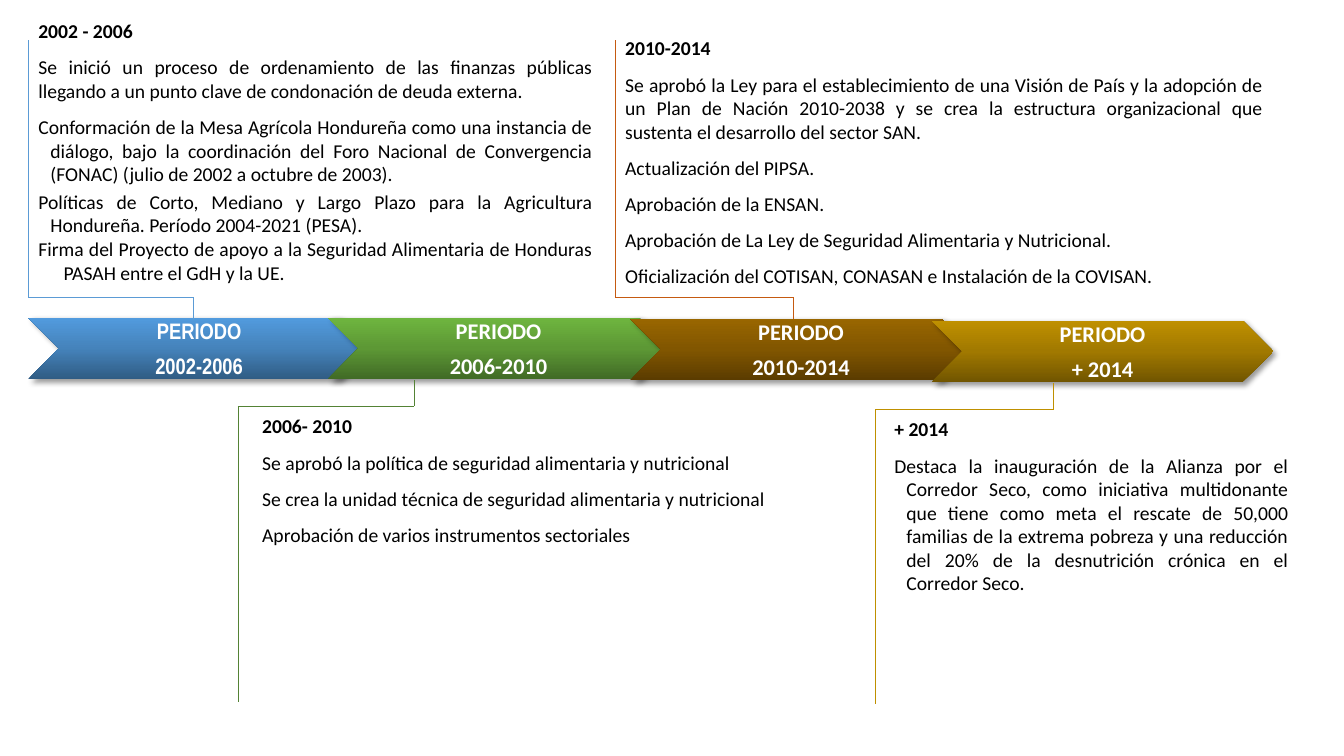
import pptx
import pptx.util
import pptx.dml.color
import pptx.enum.shapes
import pptx.enum.text
import pptx.oxml
import pptx.oxml.ns
import copy

Inches = pptx.util.Inches
Pt = pptx.util.Pt
RGBColor = pptx.dml.color.RGBColor
ALIGN = pptx.enum.text.PP_ALIGN
ANCHOR = pptx.enum.text.MSO_ANCHOR

BLACK = RGBColor(0x00, 0x00, 0x00)
WHITE = RGBColor(0xFF, 0xFF, 0xFF)
BLUE = RGBColor(0x5B, 0x9B, 0xD5)
ORANGE = RGBColor(0xC5, 0x5A, 0x11)
GREEN = RGBColor(0x54, 0x82, 0x35)
GOLD = RGBColor(0xBF, 0x90, 0x00)
# Chevron gradients, from bottom to top
BLUES = RGBColor(0x30, 0x5C, 0x84), RGBColor(0x45, 0x83, 0xBB), RGBColor(0x52, 0x9B, 0xDE)
GREENS = RGBColor(0x41, 0x6B, 0x26), RGBColor(0x5D, 0x98, 0x35), RGBColor(0x6E, 0xB5, 0x3F)
BROWNS = RGBColor(0x5B, 0x3C, 0x00), RGBColor(0x81, 0x56, 0x00), RGBColor(0x99, 0x66, 0x00)
GOLDS = RGBColor(0x71, 0x55, 0x00), RGBColor(0xA1, 0x79, 0x00), RGBColor(0xBF, 0x90, 0x00)

# Each panel: box, heading, then (text, hanging indent, space before, space after)
PANELS = [
    ((0.28, 0.14, 5.7, 2.81), "2002 - 2006", [
        ("Se inició un proceso de ordenamiento de las finanzas públicas llegando a un "
         "punto clave de condonación de deuda externa.", 0, 6, 3),
        ("Conformación de la Mesa Agrícola Hondureña como una instancia de diálogo, bajo "
         "la coordinación del Foro Nacional de Convergencia (FONAC) (julio de 2002 a "
         "octubre de 2003).", 0.12, 6, 3),
        ("Políticas de Corto, Mediano y Largo Plazo para la Agricultura Hondureña. "
         "Período 2004-2021 (PESA).", 0.12, 0, 0),
        ("Firma del Proyecto de apoyo a la Seguridad Alimentaria de Honduras PASAH entre "
         "el GdH y la UE.", 0.25, 0, 8)]),
    ((6.1, 0.31, 6.53, 2.64), "2010-2014", [
        ("Se aprobó la Ley para el establecimiento de una Visión de País y la adopción de "
         "un Plan de Nación 2010-2038 y se crea la estructura organizacional que sustenta "
         "el desarrollo del sector SAN.", 0, 6, 3),
        ("Actualización del PIPSA.", 0.12, 6, 3),
        ("Aprobación de la ENSAN.", 0.12, 6, 3),
        ("Aprobación de La Ley de Seguridad Alimentaria y Nutricional.", 0.12, 6, 3),
        ("Oficialización del COTISAN, CONASAN e Instalación de la COVISAN.", 0.12, 6, 3)]),
    ((2.5, 4.06, 5.59, 1.52), "2006- 2010", [
        ("Se aprobó la política de seguridad alimentaria y nutricional", 0, 6, 3),
        ("Se crea la unidad técnica de seguridad alimentaria y nutricional", 0, 6, 3),
        ("Aprobación de varios instrumentos sectoriales", 0.12, 6, 0)]),
    ((8.77, 4.09, 4.11, 3.15), "+ 2014", [
        ("Destaca la inauguración de la Alianza por el Corredor Seco, como iniciativa "
         "multidonante que tiene como meta el rescate de 50,000 familias de la extrema "
         "pobreza y una reducción del 20% de la desnutrición crónica en el Corredor Seco.",
         0.12, 6, 0)]),
]

# Each chevron: left, top, period, font, gradient
CHEVRONS = [
    (0.28, 3.15, "2002-2006", "Arial Narrow", BLUES),
    (3.25, 3.15, "2006-2010", "Calibri", GREENS),
    (6.25, 3.16, "2010-2014", "Calibri", BROWNS),
    (9.24, 3.18, "+ 2014", "Calibri", GOLDS),
]

# Each bracket: panel side x, far end y, bend y, chevron x, chevron y, colour
BRACKETS = [
    (0.28, 0.4, 2.95, 1.92, 3.17, BLUE),
    (6.1, 0.4, 2.95, 7.87, 3.16, ORANGE),
    (2.36, 6.96, 4.03, 4.11, 3.77, GREEN),
    (8.68, 6.98, 4.06, 10.45, 3.8, GOLD),
]

SHADOW = (
    '<a:outerShdw %s blurRad="50800" dist="38100" dir="2700000" algn="tl" rotWithShape="0">'
    '<a:srgbClr val="000000"><a:alpha val="40000"/></a:srgbClr></a:outerShdw>'
    % pptx.oxml.ns.nsdecls("a"))


def format_run(r, size, font, color, bold):
    r.font.size = Pt(size)
    r.font.name = font
    r.font.color.rgb = color
    r.font.bold = bold


def add_panel(sp, box, heading, items):
    """Text panel: bold heading followed by justified entries."""
    sp.left, sp.top, sp.width, sp.height = map(Inches, box)
    sp.fill.solid()
    sp.fill.fore_color.rgb = WHITE
    tf = sp.text_frame
    tf.word_wrap = True
    tf.auto_size = pptx.enum.text.MSO_AUTO_SIZE.NONE
    tf.vertical_anchor = ANCHOR.TOP
    rows = [(heading, 0, 6, 3)] + items
    tf.text = "\n".join(row[0] for row in rows)
    for i, (p, (text, indent, before, after)) in enumerate(zip(tf.paragraphs, rows)):
        p.alignment = ALIGN.JUSTIFY
        p.space_before, p.space_after = Pt(before), Pt(after)
        pPr = p._p.get_or_add_pPr()
        pPr.set("marL", str(Inches(indent)))
        pPr.set("indent", str(-Inches(indent)))
        pPr.append(pptx.oxml.parse_xml("<a:buNone %s/>" % pptx.oxml.ns.nsdecls("a")))
        format_run(p.runs[0], 14, "Calibri", BLACK, i == 0)


def add_chevron(s, box, period, font, gradient):
    """Timeline step with a three-colour vertical gradient."""
    sp = s.shapes.add_shape(pptx.enum.shapes.MSO_SHAPE.CHEVRON, *map(Inches, box))
    sp.fill.gradient()
    sp.fill.gradient_angle = 90
    gs_list = sp._element.spPr.find(".//" + pptx.oxml.ns.qn("a:gsLst"))
    gs_list.insert(1, copy.deepcopy(gs_list[0]))
    for stop, position, color in zip(sp.fill.gradient_stops, (0, 0.5, 1), gradient):
        stop.position = position
        stop.color.rgb = color
    sp.line.fill.background()
    sp.shadow.inherit = False
    effects = sp._element.spPr.find(pptx.oxml.ns.qn("a:effectLst"))
    effects.append(pptx.oxml.parse_xml(SHADOW))
    tf = sp.text_frame
    tf.word_wrap = True
    tf.vertical_anchor = ANCHOR.MIDDLE
    tf.text = "PERIODO\n" + period
    for p in tf.paragraphs:
        p.alignment = ALIGN.CENTER
        p.space_before = Pt(6)
        format_run(p.runs[0], 16, font, WHITE, True)


def add_bracket(s, x, far_y, bend_y, step_x, step_y, color):
    """Three thin lines joining a panel to its chevron."""
    points = [(x, far_y), (x, bend_y), (step_x, bend_y), (step_x, step_y)]
    for start, end in zip(points, points[1:]):
        line = s.shapes.add_connector(
            pptx.enum.shapes.MSO_CONNECTOR.STRAIGHT, *map(Inches, start + end))
        line.line.color.rgb = color
        line.line.width = Pt(0.5)
        line._element.spPr.append(
            pptx.oxml.parse_xml("<a:effectLst %s/>" % pptx.oxml.ns.nsdecls("a")))


def build_timeline(prs):
    # Comparison layout: a title and four body placeholders
    s = prs.slides.add_slide(prs.slide_layouts[4])
    title = s.shapes.title._element
    title.getparent().remove(title)
    for sp, panel in zip(list(s.placeholders), PANELS):
        add_panel(sp, *panel)
    # Timeline band
    for left, top, period, font, gradient in CHEVRONS:
        add_chevron(s, (left, top, 3.39, 0.61), period, font, gradient)
    # Brackets
    for bracket in BRACKETS:
        add_bracket(s, *bracket)


def main():
    prs = pptx.Presentation()
    prs.slide_width, prs.slide_height = Inches(13.33), Inches(7.5)
    build_timeline(prs)
    prs.save("out.pptx")


if __name__ == "__main__":
    main()
